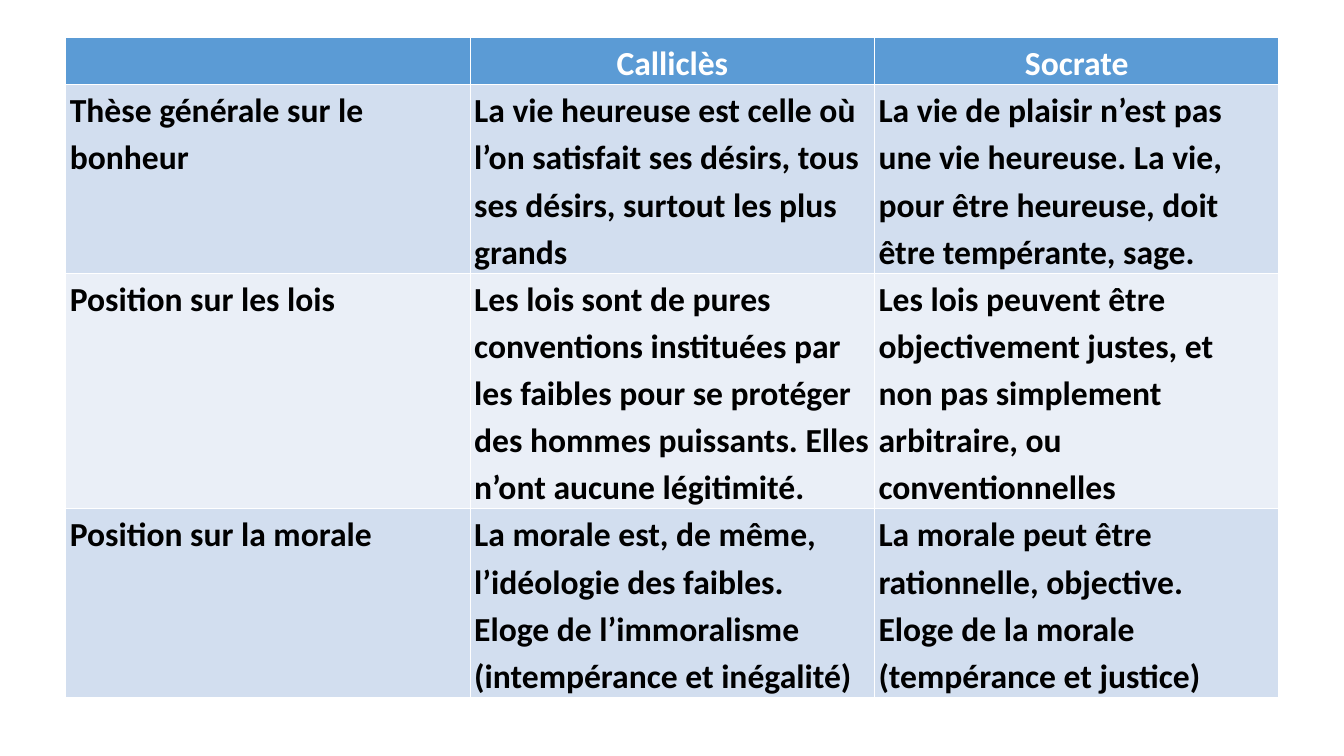
from pptx import Presentation, util as u
from pptx.dml.color import RGBColor
from pptx.enum import text

WHITE = RGBColor(0xFF, 0xFF, 0xFF)
BLACK = RGBColor(0x00, 0x00, 0x00)
HEADER_BLUE = RGBColor(0x5B, 0x9B, 0xD5)
BAND_DARK = RGBColor(0xD2, 0xDE, 0xEF)
BAND_LIGHT = RGBColor(0xEA, 0xEF, 0xF7)

COMPARISON = [
    ("", "Calliclès", "Socrate"),
    (
        "Thèse générale sur le bonheur",
        "La vie heureuse est celle où l’on satisfait ses désirs, tous ses désirs, "
        "surtout les plus grands",
        "La vie de plaisir n’est pas une vie heureuse. La vie, pour être heureuse, "
        "doit être tempérante, sage.",
    ),
    (
        "Position sur les lois",
        "Les lois sont de pures conventions instituées par les faibles pour se "
        "protéger des hommes puissants. Elles n’ont aucune légitimité.",
        "Les lois peuvent être objectivement justes, et non pas simplement "
        "arbitraire, ou conventionnelles",
    ),
    (
        "Position sur la morale",
        "La morale est, de même, l’idéologie des faibles.\n"
        "Eloge de l’immoralisme (intempérance et inégalité)",
        "La morale peut être rationnelle, objective.\n"
        "Eloge de la morale (tempérance et justice)",
    ),
]
LINES_PER_ROW = [1, 4, 5, 4]


class SlideBuilder:
    font_name = "Calibri"
    font_size = u.Pt(24)
    line_spacing = 1.15
    line_height = 1.18
    side_margin = u.Cm(0.1)

    def __init__(self, presentation):
        self.slide = presentation.slides.add_slide(presentation.slide_layouts[6])

    def table(self, rows, lines_per_row, left, top, width):
        height = u.Cm(self.line_height * sum(lines_per_row))
        frame = self.slide.shapes.add_table(
            len(rows), len(rows[0]), u.Cm(left), u.Cm(top), u.Cm(width), height
        )
        table = frame.table
        for column in table.columns:
            column.width = u.Cm(width / len(rows[0]))
        for index, (row, lines) in enumerate(zip(rows, lines_per_row)):
            table.rows[index].height = u.Cm(self.line_height * lines)
            is_header = index == 0
            band = BAND_DARK if index % 2 else BAND_LIGHT
            for column_index, content in enumerate(row):
                self.cell(
                    table.cell(index, column_index),
                    content,
                    HEADER_BLUE if is_header else band,
                    WHITE if is_header else BLACK,
                    text.PP_ALIGN.CENTER if is_header else text.PP_ALIGN.LEFT,
                )

    def cell(self, cell, content, fill, color, alignment):
        cell.fill.solid()
        cell.fill.fore_color.rgb = fill
        cell.margin_left = cell.margin_right = self.side_margin
        cell.margin_top = cell.margin_bottom = 0
        if not content:
            return
        for index, line in enumerate(content.split("\n")):
            frame = cell.text_frame
            paragraph = frame.add_paragraph() if index else frame.paragraphs[0]
            paragraph.alignment = alignment
            paragraph.line_spacing = self.line_spacing
            self.run(paragraph, line, color)

    def run(self, paragraph, content, color):
        run = paragraph.add_run()
        run.text = content
        run.font.name = self.font_name
        run.font.size = self.font_size
        run.font.bold = True
        run.font.color.rgb = color


def main():
    presentation = Presentation()
    presentation.slide_width = u.Cm(33.87)
    presentation.slide_height = u.Cm(19.05)
    builder = SlideBuilder(presentation)
    builder.table(COMPARISON, LINES_PER_ROW, left=1.66, top=0.95, width=30.57)
    presentation.save("out.pptx")


if __name__ == "__main__":
    main()
